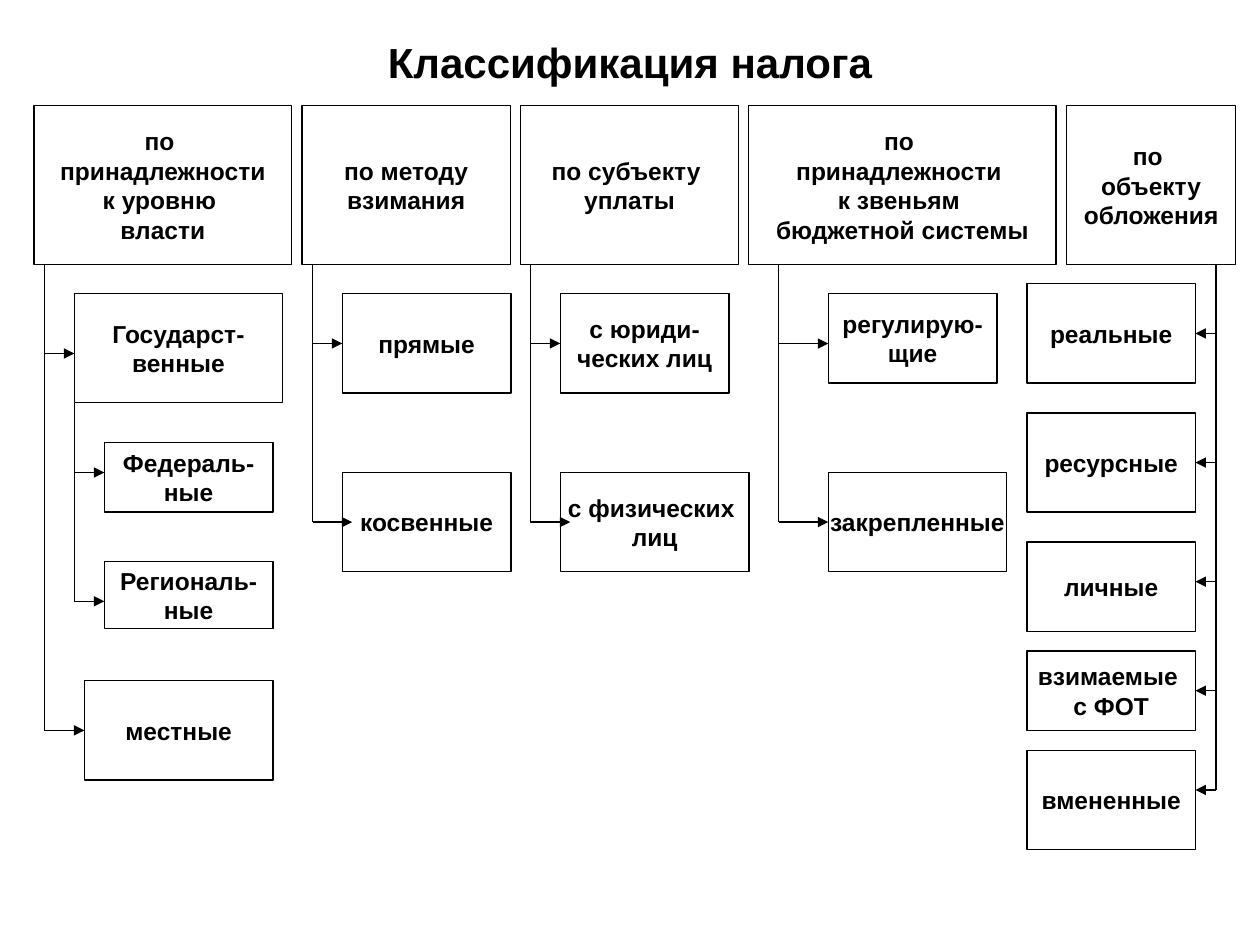
from dataclasses import dataclass

from lxml import etree
from pptx import Presentation
from pptx.dml.color import RGBColor
from pptx.enum import shapes, text
from pptx.oxml.ns import qn
from pptx.util import Pt


@dataclass(frozen=True)
class Theme:
    font: str = "Arial"
    ink: RGBColor = RGBColor(0, 0, 0)
    paper: RGBColor = RGBColor(255, 255, 255)
    title_size: float = 24
    box_size: float = 14
    line: float = 0.75


@dataclass(frozen=True)
class Leaf:
    """A box on a branch; without arrow_y its arrow joins the side's middle."""
    label: str
    x: float
    y: float
    w: float
    h: float
    arrow_y: float = None
    overlap: float = 0


class Chart:
    LEFT, RIGHT = 1, 3

    def __init__(self, slide, theme):
        self.s, self.theme = slide, theme

    def set_text(self, sp, label, size, wrap):
        tf = sp.text_frame
        tf.word_wrap = wrap
        tf.vertical_anchor = text.MSO_ANCHOR.MIDDLE
        for i, line in enumerate(label.split("\n")):
            p = tf.paragraphs[0] if i == 0 else tf.add_paragraph()
            p.text = line
            p.alignment = text.PP_ALIGN.CENTER
            p.font.name, p.font.size, p.font.bold = self.theme.font, Pt(size), True
            p.font.color.rgb = self.theme.ink

    def title(self, label, x, y, w, h):
        sp = self.s.shapes.add_textbox(Pt(x), Pt(y), Pt(w), Pt(h))
        self.set_text(sp, label, self.theme.title_size, True)

    def box(self, label, x, y, w, h):
        sp = self.s.shapes.add_shape(
            shapes.MSO_SHAPE.RECTANGLE, Pt(x), Pt(y), Pt(w), Pt(h))
        sp.shadow.inherit = False
        sp.fill.background()
        sp.line.color.rgb, sp.line.width = self.theme.ink, Pt(self.theme.line)
        self.set_text(sp, label, self.theme.box_size, False)
        return sp

    def line(self, x1, y1, x2, y2, arrow=False):
        c = self.s.shapes.add_connector(
            shapes.MSO_CONNECTOR.STRAIGHT, Pt(x1), Pt(y1), Pt(x2), Pt(y2))
        c.line.color.rgb, c.line.width = self.theme.ink, Pt(self.theme.line)
        props = c._element.spPr
        if arrow:
            etree.SubElement(props.find(qn("a:ln")), qn("a:tailEnd"), type="triangle")
        etree.SubElement(props, qn("a:effectLst"))
        return c

    def branch(self, trunk_x, top, leaves, side=LEFT):
        """Draw the leaves, an arrow to each, and the trunk down to the last."""
        for leaf in leaves:
            sp = self.box(leaf.label, leaf.x, leaf.y, leaf.w, leaf.h)
            joined = leaf.arrow_y is None and not leaf.overlap
            y = leaf.arrow_y or leaf.y + leaf.h / 2
            tip = leaf.x + leaf.overlap if side == self.LEFT else leaf.x + leaf.w
            c = self.line(trunk_x, y, tip, y, arrow=True)
            if joined:
                c.end_connect(sp, side)
        self.line(trunk_x, top, trunk_x, y)


HEAD_TOP, HEAD_H = 60.5, 90.7
HEAD_BOTTOM = HEAD_TOP + HEAD_H
ROW_1, ROW_2 = 167.9, 270
W, H = 96.4, 56.7        # usual leaf size
STEP = 5.67              # drawing grid
OBJECT_X = 586.8

HEADERS = [
    ("по \nпринадлежности\nк уровню \nвласти", 19.4, 147.4),
    ("по методу\nвзимания", 172.6, 119),
    ("по субъекту \nуплаты", 297.4, 124.7),
    ("по \nпринадлежности \nк звеньям \nбюджетной системы", 427.8, 175.7),
    ("по \nобъекту\nобложения", 609.6, 96.4),
]

# Trunk x and leaves of the branches whose arrows point right
BRANCHES = [
    (25.3, [Leaf("Государст-\nвенные", 42.5, ROW_1, 119, 62.3, arrow_y=202),
            Leaf("местные", 48.2, 389, 107.8, H)]),
    (178.6, [Leaf("прямые", 195.6, ROW_1, W, H),
             Leaf("косвенные", 195.6, ROW_2, W, H, overlap=STEP)]),
    (303.1, [Leaf("с юриди-\nческих лиц", 320.2, ROW_1, W, H),
             Leaf("с физических \nлиц", 320.2, ROW_2, 107.8, H, overlap=STEP)]),
    (444.9, [Leaf("регулирую-\nщие", 473.3, ROW_1, W, 51, arrow_y=196.3),
             Leaf("закрепленные", 473.3, ROW_2, 102, H)]),
]

STATE_LEVELS = [
    Leaf("Федераль-\nные", 59.6, 252.9, W, 39.7, arrow_y=270),
    Leaf("Региональ-\nные", 59.6, 321, W, 38, arrow_y=343.6),
]

OBJECTS = [
    Leaf("реальные", OBJECT_X, 162.2, W, H),
    Leaf("ресурсные", OBJECT_X, 236, W, H),
    Leaf("личные", OBJECT_X, 309.7, W, 51, arrow_y=332.4),
    Leaf("взимаемые \nс ФОТ", OBJECT_X, 372, W, 45.4),
    Leaf("вмененные", OBJECT_X, 428.7, W, H, arrow_y=451.4),
]


def main():
    prs = Presentation()
    prs.slide_width, prs.slide_height = Pt(720), Pt(540)
    s = prs.slides.add_slide(prs.slide_layouts[6])
    theme = Theme()
    s.background.fill.solid()
    s.background.fill.fore_color.rgb = theme.paper
    chart = Chart(s, theme)

    # Title and the row of criteria
    chart.title("Классификация налога", 36, 21.6, 648, 27.4)
    for label, x, w in HEADERS:
        chart.box(label, x, HEAD_TOP, w, HEAD_H)

    # Kinds of tax under each criterion
    for trunk_x, leaves in BRANCHES:
        chart.branch(trunk_x, HEAD_BOTTOM, leaves)
    chart.branch(694.8, HEAD_BOTTOM, OBJECTS, Chart.RIGHT)

    # Levels of state taxes
    state = BRANCHES[0][1][0]
    chart.branch(state.x, state.y + state.h, STATE_LEVELS)

    prs.save("out.pptx")


if __name__ == "__main__":
    main()
